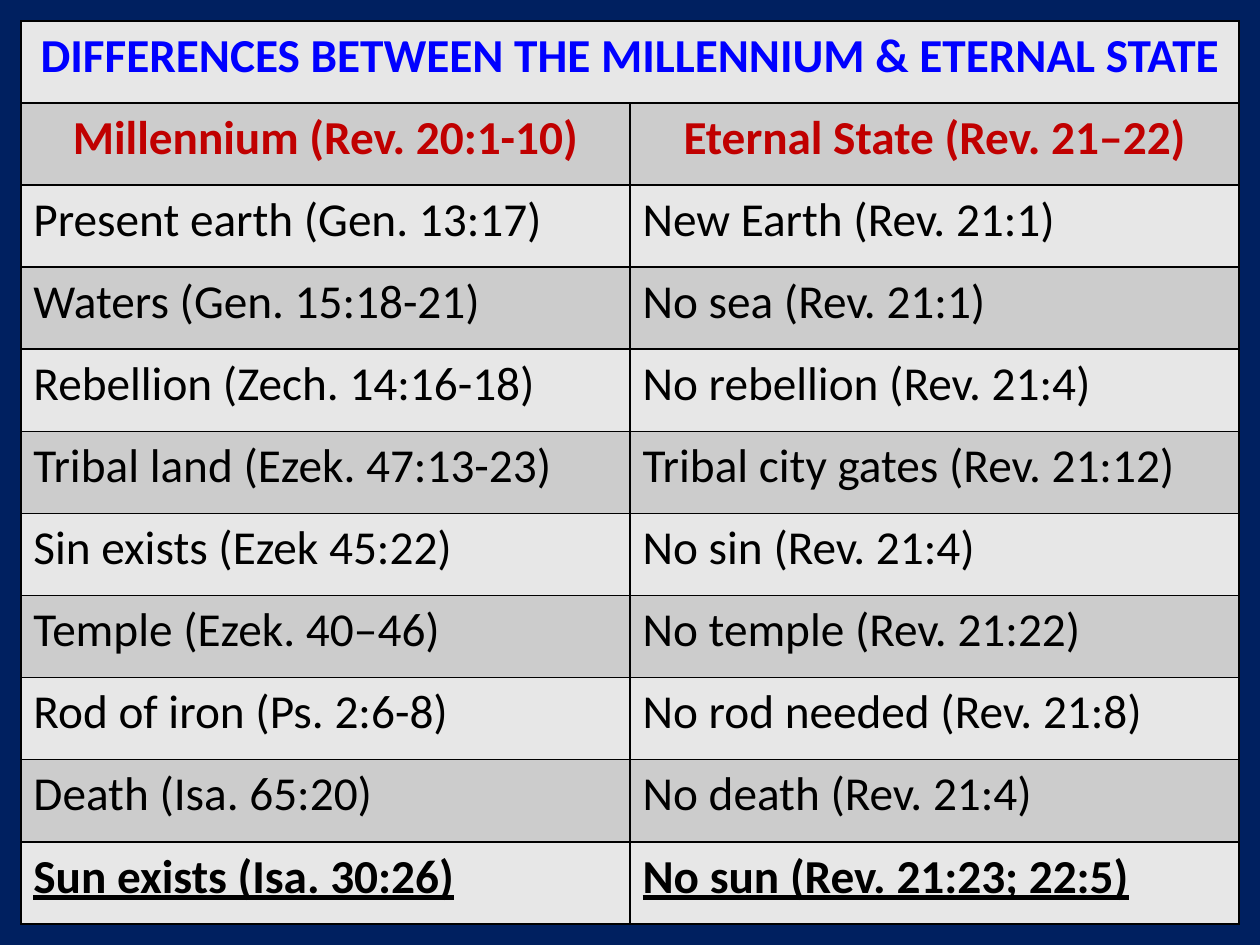
import pptx
import pptx.dml.color
import pptx.enum.text
import pptx.oxml
import pptx.oxml.ns
import pptx.util

Cm = pptx.util.Cm
Pt = pptx.util.Pt
RGB = pptx.dml.color.RGBColor.from_string
CENTER = pptx.enum.text.PP_ALIGN.CENTER
LEFT = pptx.enum.text.PP_ALIGN.LEFT

COLORS = {
    "background": "002060",
    "light": "E7E7E7",
    "dark": "CCCCCC",
    "title": "0000FF",
    "heading": "C00000",
    "body": "000000",
    "border": "000000",
}

ROWS = [
    ("DIFFERENCES BETWEEN THE MILLENNIUM & ETERNAL STATE",),
    ("Millennium (Rev. 20:1-10)", "Eternal State (Rev. 21‒22)"),
    ("Present earth (Gen. 13:17)", "New Earth (Rev. 21:1)"),
    ("Waters (Gen. 15:18-21)", "No sea (Rev. 21:1)"),
    ("Rebellion (Zech. 14:16-18)", "No rebellion (Rev. 21:4)"),
    ("Tribal land (Ezek. 47:13-23)", "Tribal city gates (Rev. 21:12)"),
    ("Sin exists (Ezek 45:22)", "No sin (Rev. 21:4)"),
    ("Temple (Ezek. 40‒46)", "No temple (Rev. 21:22)"),
    ("Rod of iron (Ps. 2:6-8)", "No rod needed (Rev. 21:8)"),
    ("Death (Isa. 65:20)", "No death (Rev. 21:4)"),
    ("Sun exists (Isa. 30:26)", "No sun (Rev. 21:23; 22:5)"),
]
LAST = len(ROWS) - 1
STYLES = {
    0: ("title", CENTER, {"bold": True}),
    1: ("heading", CENTER, {"bold": True}),
    LAST: ("body", LEFT, {"bold": True, "underline": True}),
}
BODY_STYLE = ("body", LEFT, {"bold": False})
FONT = {"name": "Calibri", "size": Pt(27)}
SPACING = {"space_before": Pt(12), "space_after": Pt(12)}


def set_format(target, values):
    for name, value in values.items():
        setattr(target, name, value)


def add_borders(cell):
    properties = cell._tc.get_or_add_tcPr()
    for side in ("lnL", "lnR", "lnT", "lnB"):
        properties.append(pptx.oxml.parse_xml(
            f'<a:{side} {pptx.oxml.ns.nsdecls("a")} w="{Pt(1)}"><a:solidFill>'
            f'<a:srgbClr val="{COLORS["border"]}"/></a:solidFill></a:{side}>'
        ))


deck = pptx.Presentation()
set_format(deck, {"slide_width": Cm(25.4), "slide_height": Cm(19.05)})
page = deck.slides.add_slide(deck.slide_layouts[6])
page.background.fill.solid()
page.background.fill.fore_color.rgb = RGB(COLORS["background"])

margin = Cm(0.42)
width = deck.slide_width - 2 * margin
height = deck.slide_height - 2 * margin
table = page.shapes.add_table(len(ROWS), 2, margin, margin, width, height).table
table.cell(0, 0).merge(table.cell(0, 1))

for row_index, texts in enumerate(ROWS):
    color, alignment, emphasis = STYLES.get(row_index, BODY_STYLE)
    for column_index in range(2):
        cell = table.cell(row_index, column_index)
        add_borders(cell)
        cell.fill.solid()
        cell.fill.fore_color.rgb = RGB(COLORS["dark" if row_index % 2 else "light"])
        if column_index < len(texts):
            para = cell.text_frame.paragraphs[0]
            set_format(para, {"alignment": alignment, **SPACING})
            span = para.add_run()
            span.text = texts[column_index]
            set_format(span.font, {**FONT, **emphasis})
            span.font.color.rgb = RGB(COLORS[color])

deck.save("out.pptx")
